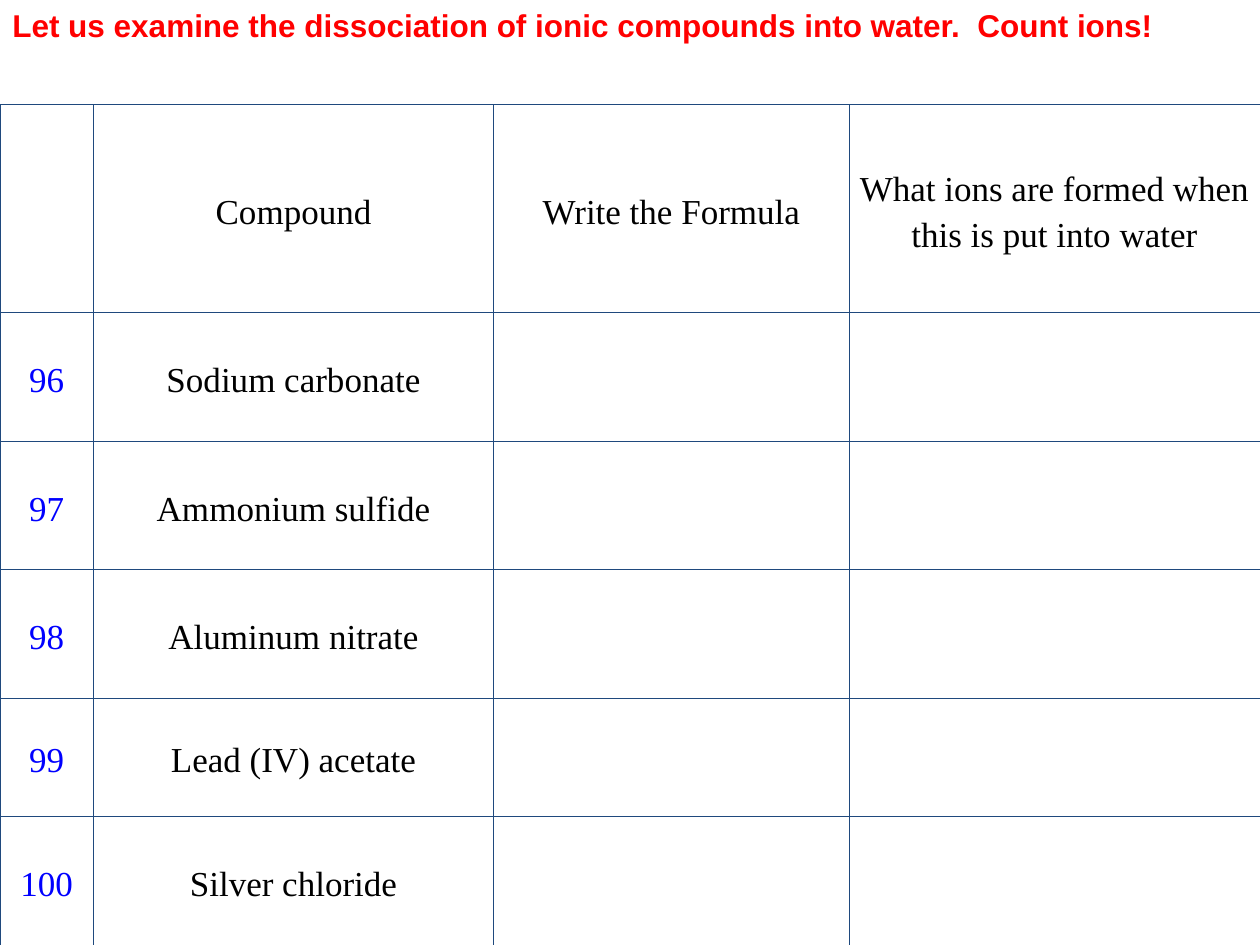
from lxml.etree import SubElement
from pptx import Presentation
from pptx.dml.color import RGBColor
from pptx.enum.text import MSO_ANCHOR as Anchor, PP_ALIGN as Align
from pptx.oxml.ns import qn
from pptx.util import Pt

COLORS = {"heading": "FF0000", "number": "0000FF", "text": "000000", "grid": "1F497D"}
SLIDE_WIDTH, SLIDE_HEIGHT = 720, 540
TABLE_TOP = 59.9
COLUMN_WIDTHS = [53.28, 228.96, 203.04, 234.72]
ROW_HEIGHTS = [118.8, 73.44, 73.44, 73.44, 67.68, 73.44]
HEADINGS = ["", "Compound", "Write the Formula",
            "What ions are formed when this is put into water"]
COMPOUNDS = ["Sodium carbonate", "Ammonium sulfide", "Aluminum nitrate",
             "Lead (IV) acetate", "Silver chloride"]
FIRST_NUMBER = 96


def style_font(font, face, size, color, bold=False):
    font.name = face
    font.size = Pt(size)
    font.bold = bold
    font.color.rgb = RGBColor.from_string(COLORS[color])


def add_heading(slide, text):
    heading = slide.shapes.add_textbox(0, 0, Pt(SLIDE_WIDTH), Pt(72.72))
    heading.text_frame.word_wrap = True
    heading.text_frame.text = text
    run = heading.text_frame.paragraphs[0].runs[0]
    style_font(run.font, "Arial", 18, "heading", bold=True)


def draw_borders(cell):
    properties = cell._tc.get_or_add_tcPr()
    for side in ("a:lnL", "a:lnR", "a:lnT", "a:lnB"):
        border = SubElement(properties, qn(side), w=str(Pt(0.5)))
        fill = SubElement(border, qn("a:solidFill"))
        SubElement(fill, qn("a:srgbClr"), val=COLORS["grid"])


def fill_cell(cell, text, color):
    draw_borders(cell)
    cell.fill.background()
    cell.vertical_anchor = Anchor.MIDDLE
    cell.margin_left = cell.margin_right = Pt(2.88)
    cell.margin_top = cell.margin_bottom = Pt(2.88)
    cell.text_frame.text = text
    paragraph = cell.text_frame.paragraphs[0]
    paragraph.alignment = Align.CENTER
    paragraph.line_spacing = 1.19
    paragraph.space_after = Pt(6)
    for run in paragraph.runs:
        style_font(run.font, "Times New Roman", 20, color)


def add_ion_table(slide, rows):
    table = slide.shapes.add_table(
        len(rows), len(HEADINGS), 0, Pt(TABLE_TOP),
        Pt(sum(COLUMN_WIDTHS)), Pt(sum(ROW_HEIGHTS))).table
    table.first_row = table.horz_banding = False
    for column, width in zip(table.columns, COLUMN_WIDTHS):
        column.width = Pt(width)
    for row, height, texts in zip(table.rows, ROW_HEIGHTS, rows):
        row.height = Pt(height)
        for index, (cell, text) in enumerate(zip(row.cells, texts)):
            fill_cell(cell, text, "text" if index else "number")


def main():
    deck = Presentation()
    deck.slide_width, deck.slide_height = Pt(SLIDE_WIDTH), Pt(SLIDE_HEIGHT)
    slide = deck.slides.add_slide(deck.slide_layouts[6])
    add_heading(slide, "Let us examine the dissociation of ionic compounds "
                       "into water.  Count ions!")
    questions = [[str(number), compound, "", ""]
                 for number, compound in enumerate(COMPOUNDS, FIRST_NUMBER)]
    add_ion_table(slide, [HEADINGS] + questions)
    deck.save("out.pptx")


if __name__ == "__main__":
    main()
